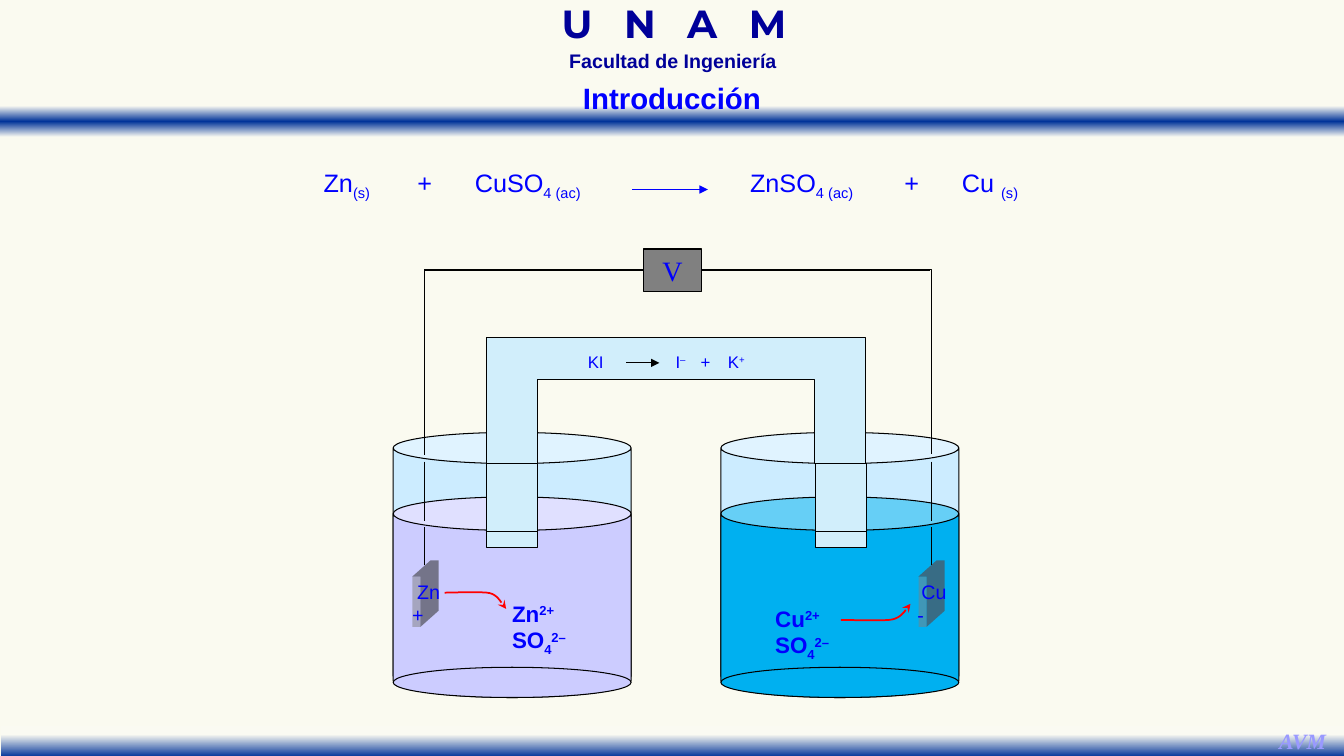
from lxml import etree
from pptx import Presentation
from pptx.dml.color import RGBColor
from pptx.enum.shapes import MSO_CONNECTOR, MSO_SHAPE
from pptx.enum.text import MSO_ANCHOR, MSO_AUTO_SIZE, PP_ALIGN
from pptx.oxml.ns import qn
from pptx.util import Inches, Pt

C = {"paper": "FAFAF0", "band": "FAFAF2", "navy": "003399", "heading": "000099",
     "ink": "0000FF", "mark": "9999FF", "black": "000000", "red": "FF0000",
     "glass": "CCECFF", "zinc": "CCCCFF", "copper": "00B0F0", "bridge": "D1EEFB",
     "metal": "808080", "metal_side": "505058"}


def rgb(name):
    return RGBColor.from_string(C[name])


def cells(*values):
    """Grid columns or rows, each 0.1 inch, as lengths."""
    return [Inches(v / 10) for v in values]


def bezier(p0, p1, p2, p3, steps=12):
    return [tuple((1 - t) ** 3 * a + 3 * (1 - t) ** 2 * t * b + 3 * (1 - t) * t * t * c + t ** 3 * d
                  for a, b, c, d in zip(p0, p1, p2, p3))
            for t in (i / steps for i in range(steps + 1))]


def para(*parts):
    """Turn strings and (text, baseline) pairs into (text, baseline, letter spacing)."""
    return [(part, 0, 0) if isinstance(part, str) else (*part, 0, 0)[:3] for part in parts]


class Board:
    font, size, color = "Arial", 18, "ink"

    def __init__(self, slide):
        self.s = slide

    def fill_text(self, tf, paras, size=None, color=None, font=None, bold=None, italic=None,
                  align=PP_ALIGN.LEFT, spacing=None):
        tf.word_wrap = False
        for i, parts in enumerate(paras):
            p = tf.add_paragraph() if i else tf.paragraphs[0]
            p.alignment, p.line_spacing = align, spacing
            p.space_before = Pt(0)
            for text, base, gap in parts:
                r = p.add_run()
                r.text = text
                f = r.font
                f.name, f.size = font or self.font, Pt(size or self.size)
                f.bold, f.italic = bold, italic
                f.color.rgb = rgb(color or self.color)
                for key, value in (("baseline", base * 1000), ("spc", gap)):
                    if value:
                        r._r.get_or_add_rPr().set(key, str(value))

    def text(self, box, paras, inset=(0.1, 0.05), **style):
        tf = self.s.shapes.add_textbox(*cells(*box)).text_frame
        tf.margin_left = tf.margin_right = Inches(inset[0])
        tf.margin_top = tf.margin_bottom = Inches(inset[1])
        self.fill_text(tf, paras, **style)
        tf.auto_size = MSO_AUTO_SIZE.SHAPE_TO_FIT_TEXT

    def title(self, box, text, **style):
        """Fill the title placeholder and bring it in front of the bands."""
        sp = self.s.shapes.title
        sp.left, sp.top, sp.width, sp.height = cells(*box)
        self.fill_text(sp.text_frame, [para(text)], align=PP_ALIGN.CENTER, **style)
        sp.text_frame.vertical_anchor = MSO_ANCHOR.MIDDLE
        self.s.shapes._spTree.append(sp._element)

    def paint(self, sp, fill=None, line="black", width=0.75, alpha=None, arrow=None):
        sp.shadow.inherit = False
        if fill:
            sp.fill.solid()
            sp.fill.fore_color.rgb = rgb(fill)
        else:
            sp.fill.background()
        if alpha:
            clr = sp._element.spPr.find(".//" + qn("a:srgbClr"))
            etree.SubElement(clr, qn("a:alpha")).set("val", str(alpha * 1000))
        self.stroke(sp, line, width, arrow)
        return sp

    def stroke(self, sp, line, width=0.75, arrow=None):
        if not line:
            sp.line.fill.background()
            return
        sp.line.color.rgb = rgb(line)
        sp.line.width = Pt(width)
        if arrow:
            ln = sp._element.spPr.find(qn("a:ln"))
            etree.SubElement(ln, qn("a:tailEnd")).set("type", arrow)

    def shape(self, kind, box, fill, adj=None, **look):
        sp = self.s.shapes.add_shape(kind, *cells(*box))
        if adj:
            sp.adjustments[0] = adj
        return self.paint(sp, fill, **look)

    def band(self, box, stops):
        sp = self.shape(MSO_SHAPE.RECTANGLE, box, "band", line=None)
        sp.fill.gradient()
        sp.fill.gradient_angle = 270
        gs_list = sp._element.spPr.find(".//" + qn("a:gsLst"))
        gs_list.clear()
        for pos, name in stops:
            gs = etree.SubElement(gs_list, qn("a:gs"))
            gs.set("pos", str(pos * 1000))
            etree.SubElement(gs, qn("a:srgbClr")).set("val", C[name])

    def outline(self, points, closed=True, **look):
        pts = [cells(*pt) for pt in points]
        fb = self.s.shapes.build_freeform(*pts[0])
        fb.add_line_segments(pts[1:], close=closed)
        self.paint(fb.convert_to_shape(), **look)

    def line(self, x1, y1, x2, y2, color="black", arrow=None):
        cx = self.s.shapes.add_connector(MSO_CONNECTOR.STRAIGHT, *cells(x1, y1, x2, y2))
        self.stroke(cx, color, arrow=arrow)
        etree.SubElement(cx._element.spPr, qn("a:effectLst"))

    def beaker(self, x, liquid):
        self.shape(MSO_SHAPE.CAN, (x, 42.9, 23.6, 25.7), "glass", adj=0.131)
        self.shape(MSO_SHAPE.CAN, (x, 49.3, 23.6, 19.9), liquid, adj=0.167)
        self.shape(MSO_SHAPE.OVAL, (x, 66.2, 23.6, 3), liquid)

    def ions(self, x, y, metal):
        self.text((x, y, 7.8, 6.4), [para(metal, ("2+", 30)), para("SO", ("4", -25), ("2–", 30))],
                  size=16, bold=True)

    def electrode(self, x, wire_x):
        self.shape(MSO_SHAPE.RECTANGLE, (x, 57.2, 0.8, 5), "metal", alpha=50, line=None)
        self.outline([(x, 57.2), (x + 1.8, 55.6), (x + 2.6, 55.6), (x + 2.6, 60.6),
                      (x + 0.8, 62.2), (x + 0.8, 57.2)], fill="metal_side", alpha=70, line=None)
        for top, bottom in ((45.8, 51.7), (52.3, 56.1)):
            self.line(wire_x, top, wire_x, bottom)


def main():
    prs = Presentation()
    prs.slide_width, prs.slide_height = Inches(13.33), Inches(7.5)
    s = prs.slides.add_slide(prs.slide_layouts[5])
    s.background.fill.solid()
    s.background.fill.fore_color.rgb = rgb("paper")
    b = Board(s)

    b.band((-0.1, 10.5, 133.5, 3.1), [(0, "band"), (50, "navy"), (100, "band")])
    b.band((0.1, 72, 133.5, 3.1), [(28, "band"), (100, "navy")])
    head = dict(color="heading", bold=True, align=PP_ALIGN.CENTER, spacing=0.7)
    b.text((47.3, 0.7, 39.1, 4.5), [para(("U N A ", 0, 730), "M")], size=28,
           font="Montserrat", **head)
    b.text((48.9, 5, 35.7, 2.7), [para("Facultad de Ingeniería")], size=14, **head)
    b.text((125.8, 71.7, 6.8, 3.7), [para("AVM")], size=15.6, color="mark",
           font="Times New Roman", bold=True, italic=True, align=PP_ALIGN.CENTER)
    b.title((56.7, 7.4, 19.9, 4.5), "Introducción", size=21, bold=True)

    equation = [(32.1, 4.9, para("Zn", ("(s)", -25))), (41.4, 1.5, para("+")),
                (47.1, 11.3, para("CuSO", ("4 (ac)", -25))),
                (74.4, 11, para("ZnSO", ("4 (ac)", -25))), (89.7, 1.5, para("+")),
                (95.4, 6.1, para("Cu ", ("(s)", -25)))]
    for x, w, term in equation:
        b.text((x, 16.6, w, 3), [term], inset=(0, 0), align=PP_ALIGN.JUSTIFY)
    b.line(62.7, 18.8, 70.2, 18.8, "ink", "triangle")

    b.line(42.2, 26.8, 92.2, 26.8)
    b.beaker(39, "zinc")
    b.beaker(71.5, "copper")
    b.ions(49.8, 59, "Zn")
    b.ions(75.9, 59.5, "Cu")

    b.outline([(48.3, 46), (53.3, 46), (53.3, 37.7), (80.8, 37.7), (80.8, 46),
               (85.8, 46), (85.8, 33.5), (48.3, 33.5)], fill="bridge")
    for x in (48.3, 80.9):
        b.shape(MSO_SHAPE.RECTANGLE, (x, 46, 5, 8.3), "bridge")
        b.line(x, 52.7, x + 5, 52.7)
    salt = [(58.1, 2, para("KI")), (66.8, 1.5, para("I", ("–", 30))),
            (69.3, 1.4, para("+")), (72, 2.2, para("K", ("+", 30)))]
    for x, w, term in salt:
        b.text((x, 34.9, w, 2), [term], inset=(0.02, 0), size=12)
    b.line(62.1, 36, 65.4, 36, arrow="triangle")

    b.outline([(42.1, 45.1), (42.1, 26.7), (92.4, 26.7), (92.4, 45)], closed=False)
    b.electrode(40.9, 42.1)
    b.electrode(91.1, 92.4)
    for x, y, w, label in ((90.4, 57, 4.6, "Cu"), (90, 59.3, 2.7, "-"),
                           (40.4, 57, 4.4, "Zn"), (39.9, 59.3, 3.1, "+")):
        b.text((x, y, w, 3.3), [para(label)], size=14)

    meter = b.shape(MSO_SHAPE.RECTANGLE, (63.8, 24.7, 5.8, 4.2), "metal")
    meter.text_frame.vertical_anchor = MSO_ANCHOR.MIDDLE
    b.fill_text(meter.text_frame, [para("V")], size=20, font="Times New Roman",
                align=PP_ALIGN.CENTER)

    flows = [((44.1, 58.8), (44.8, 58.8), (47.1, 58.7), (48.3, 58.8),
              (49.5, 58.9), (49.8, 60.1), (50.2, 60.4)),
             ((83.4, 61.5), (84.2, 61.5), (86.8, 61.6), (88.2, 61.5),
              (89.5, 61.4), (89.9, 60.3), (90.3, 59.9))]
    for f in flows:
        b.outline(bezier(*f[:4]) + bezier(*f[3:])[1:], closed=False,
                  line="red", width=1.25, arrow="stealth")

    prs.save("out.pptx")


if __name__ == "__main__":
    main()
